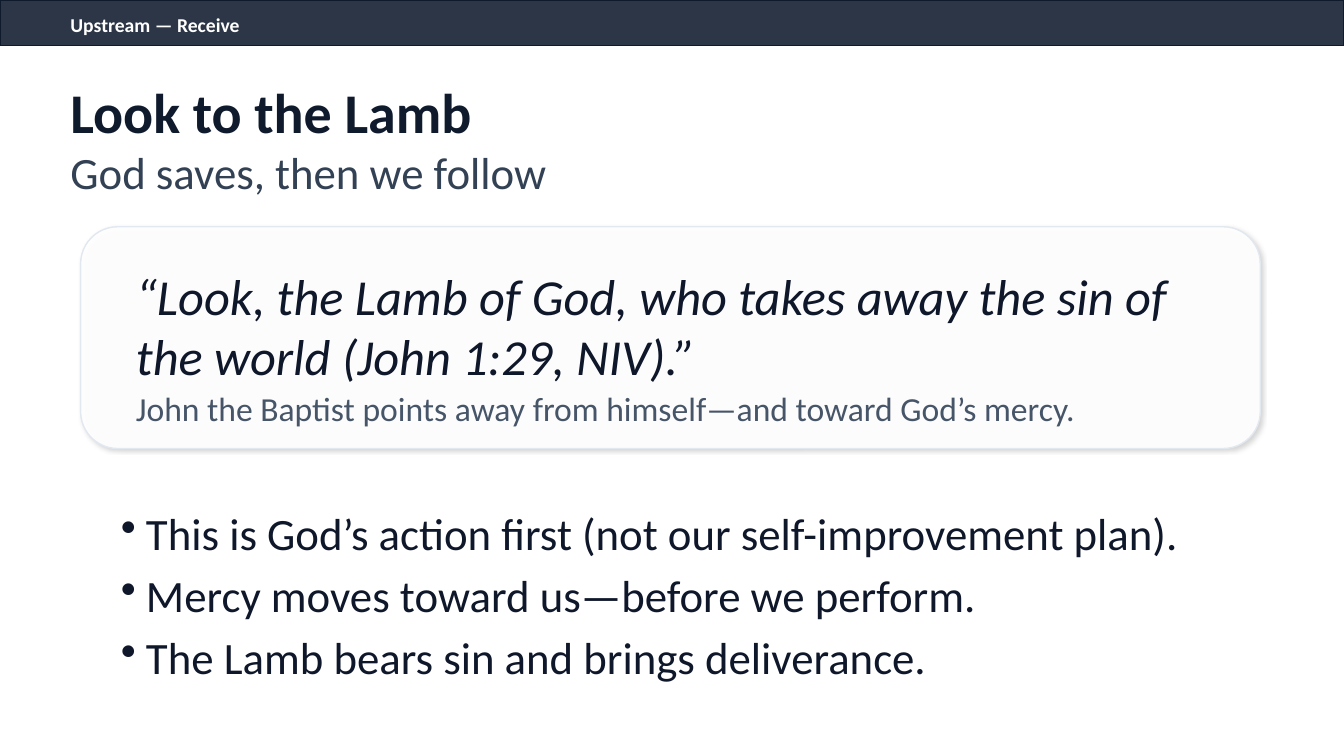
from dataclasses import dataclass

from lxml import etree
from pptx import Presentation
from pptx.dml.color import RGBColor
from pptx.enum.shapes import MSO_SHAPE
from pptx.enum.text import MSO_ANCHOR
from pptx.oxml import parse_xml
from pptx.oxml.ns import nsdecls, qn
from pptx.shapes.autoshape import Shape
from pptx.slide import Slide
from pptx.util import Inches, Pt

RECT = MSO_SHAPE.RECTANGLE
ROUND = MSO_SHAPE.ROUNDED_RECTANGLE
MIDDLE = MSO_ANCHOR.MIDDLE

NAVY = RGBColor(0x0F, 0x1B, 0x2D)
INK = RGBColor(0x0F, 0x17, 0x2A)
SLATE = RGBColor(0x33, 0x41, 0x55)
GRAY = RGBColor(0x47, 0x55, 0x69)
PALE = RGBColor(0xE2, 0xE8, 0xF0)
WHITE = RGBColor(0xFF, 0xFF, 0xFF)
FONT = "Calibri"


@dataclass(frozen=True)
class Box:
    left: float
    top: float
    width: float
    height: float

    def place(self) -> tuple[int, int, int, int]:
        return (Inches(self.left), Inches(self.top),
                Inches(self.width), Inches(self.height))


@dataclass(frozen=True)
class Label:
    box: Box
    text: str
    size: int
    color: RGBColor
    bold: bool = False
    italic: bool = False
    bullet: bool = False


LABELS = [
    Label(Box(0.6, 0.09, 12.2, 0.3), "Upstream — Receive", 14, WHITE, bold=True),
    Label(Box(0.6, 0.7, 12.1, 0.8), "Look to the Lamb", 40, NAVY, bold=True),
    Label(Box(0.6, 1.45, 12.1, 0.5), "God saves, then we follow", 32, SLATE),
    Label(Box(1.25, 2.6, 10.8, 1.25),
          "“Look, the Lamb of God, who takes away the sin of "
          "the world (John 1:29, NIV).”", 36, INK, italic=True),
    Label(Box(1.25, 3.9, 10.8, 0.3),
          "John the Baptist points away from himself—and toward God’s mercy.",
          24, GRAY),
    Label(Box(1.1, 4.75, 11.1, 2.3),
          "This is God’s action first (not our self-improvement plan).\n"
          "Mercy moves toward us—before we perform.\n"
          "The Lamb bears sin and brings deliverance.", 32, INK, bullet=True),
]


def add_panel(slide: Slide, kind: MSO_SHAPE, box: Box, fill: RGBColor,
              line: RGBColor, alpha: int) -> Shape:
    panel = slide.shapes.add_shape(kind, *box.place())
    panel.shadow.inherit = False
    panel.fill.solid()
    panel.fill.fore_color.rgb = fill
    panel.line.color.rgb = line
    panel.line.width = Pt(1)
    color = panel.fill._xPr.find(qn("a:solidFill"))[0]
    etree.SubElement(color, qn("a:alpha"), val=str(alpha * 1000))
    return panel


def add_shadow(panel: Shape) -> None:
    effects = panel._element.spPr.find(qn("a:effectLst"))
    effects.append(parse_xml(
        f'<a:outerShdw {nsdecls("a")} blurRad="{Pt(3)}" dist="{Pt(1.5)}" '
        f'dir="{45 * 60000}" algn="tl" rotWithShape="0">'
        '<a:srgbClr val="000000"><a:alpha val="18000"/></a:srgbClr>'
        '</a:outerShdw>'))


def add_text(slide: Slide, box: Box, text: str, *, size: int, color: RGBColor,
             bold: bool = False, italic: bool = False,
             bullet: bool = False) -> None:
    frame = slide.shapes.add_textbox(*box.place()).text_frame
    frame.word_wrap = True
    frame.vertical_anchor = MIDDLE
    frame.text = text
    for para in frame.paragraphs:
        if bullet:
            props = para._p.get_or_add_pPr()
            props.set("marL", str(Inches(0.25)))
            props.set("indent", str(Inches(-0.25)))
            etree.SubElement(props, qn("a:buChar"), char="•")
            para.space_after = Pt(6)
        font = para.runs[0].font
        font.name = FONT
        font.size = Pt(size)
        font.color.rgb = color
        font.bold = bold
        font.italic = italic


def main() -> None:
    deck = Presentation()
    deck.slide_width = Inches(13.33)
    deck.slide_height = Inches(7.5)
    slide = deck.slides.add_slide(deck.slide_layouts[6])
    add_panel(slide, RECT, Box(0, 0, 13.33, 0.45), NAVY, NAVY, 88)
    card = add_panel(slide, ROUND, Box(0.8, 2.25, 11.7, 2.2), WHITE, PALE, 94)
    add_shadow(card)
    for label in LABELS:
        add_text(slide, label.box, label.text, size=label.size,
                 color=label.color, bold=label.bold, italic=label.italic,
                 bullet=label.bullet)
    deck.save("out.pptx")


if __name__ == "__main__":
    main()
